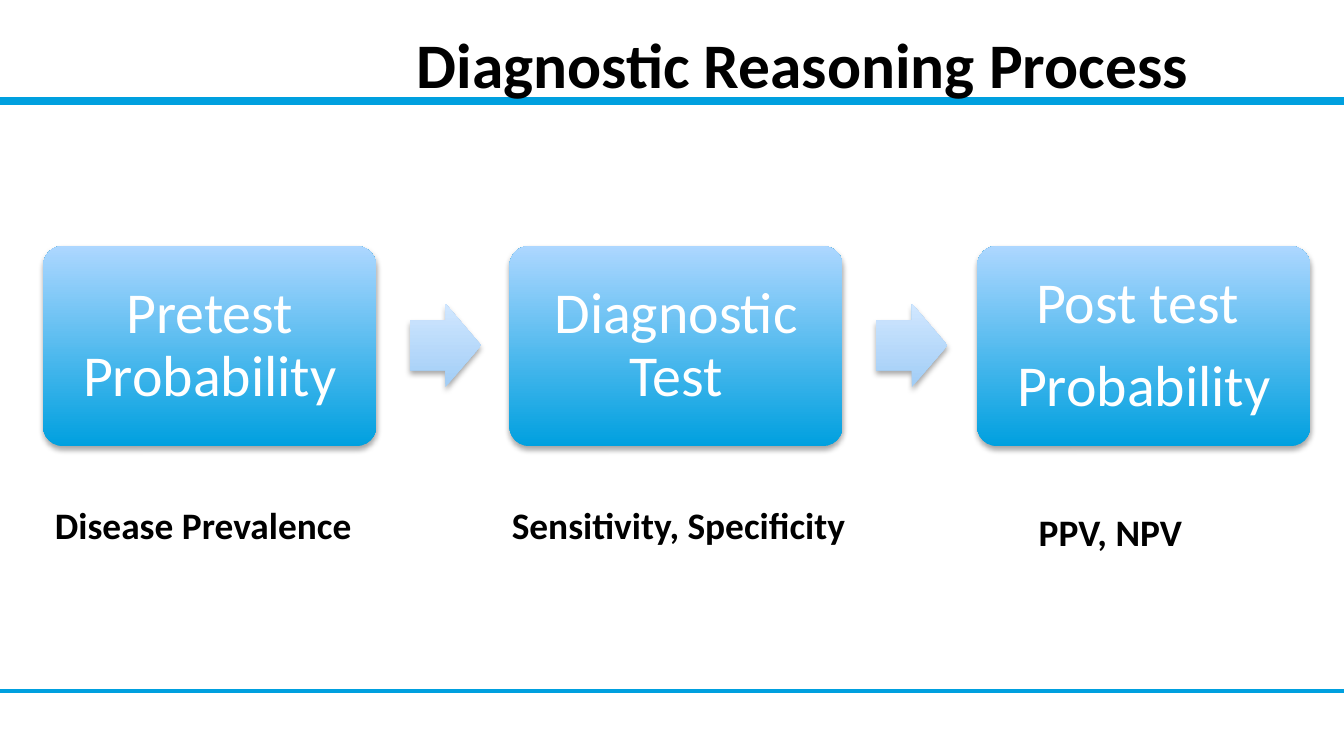
from dataclasses import dataclass

from lxml import etree
from pptx import Presentation
from pptx.dml.color import RGBColor
from pptx.enum.shapes import MSO_CONNECTOR, MSO_SHAPE
from pptx.enum.text import MSO_ANCHOR, MSO_AUTO_SIZE, PP_ALIGN
from pptx.oxml.ns import qn
from pptx.util import Inches, Pt

STRAIGHT = MSO_CONNECTOR.STRAIGHT
ROUNDED = MSO_SHAPE.ROUNDED_RECTANGLE
RIGHT_ARROW = MSO_SHAPE.RIGHT_ARROW
MIDDLE = MSO_ANCHOR.MIDDLE
LEFT, CENTER = PP_ALIGN.LEFT, PP_ALIGN.CENTER
FIXED, GROW = MSO_AUTO_SIZE.NONE, MSO_AUTO_SIZE.SHAPE_TO_FIT_TEXT

TITLE_ONLY = 5
SLIDE_WIDTH = 10
SLIDE_HEIGHT = SLIDE_WIDTH * 9 / 16
STEP_LEFTS = (0.32, 3.79, 7.27)
ARROW_LEFTS = (3.05, 6.52)


@dataclass(frozen=True)
class Theme:
    font: str = "Calibri"
    accent: str = "00A0DF"
    ink: str = "000000"
    light: str = "FFFFFF"
    step_gradient: tuple = ("00A0DF", "ADD7FF")
    arrow_gradient: tuple = ("A1CDF6", "D1E7FF")
    title_size: float = 34
    step_size: float = 31
    label_size: float = 20


def write_text(frame, text, *, font, size, color, bold=False, align=LEFT,
               line_spacing=None, space_after=None):
    """Fill a text frame, one paragraph for each line of text."""
    for index, line in enumerate(text.split("\n")):
        para = frame.add_paragraph() if index else frame.paragraphs[0]
        para.alignment = align
        if line_spacing is not None:
            para.line_spacing = line_spacing
        if space_after is not None:
            para.space_after = Pt(space_after)
        span = para.add_run()
        span.text = line
        span.font.name = font
        span.font.size = Pt(size)
        span.font.bold = bold
        span.font.color.rgb = RGBColor.from_string(color)


def add_soft_shadow(shape):
    shape.shadow.inherit = False
    effects = shape._element.spPr.find(qn("a:effectLst"))
    shadow = etree.SubElement(
        effects, qn("a:outerShdw"), blurRad=str(Pt(3.1)), dist=str(Pt(1.8)),
        dir="5400000", rotWithShape="0")
    color = etree.SubElement(shadow, qn("a:srgbClr"), val="000000")
    etree.SubElement(color, qn("a:alpha"), val="35000")


class PageBuilder:
    def __init__(self, page, theme):
        self.page = page
        self.theme = theme

    def rule(self, top, weight):
        """Draw a line across the full width of the slide."""
        line = self.page.shapes.add_connector(
            STRAIGHT, 0, Inches(top), Inches(SLIDE_WIDTH), Inches(top))
        line.line.color.rgb = RGBColor.from_string(self.theme.accent)
        line.line.width = Pt(weight)
        etree.SubElement(line._element.spPr, qn("a:effectLst"))

    def title(self, text, left, top, width, height):
        box = self.page.shapes.title
        box.left, box.top = Inches(left), Inches(top)
        box.width, box.height = Inches(width), Inches(height)
        frame = box.text_frame
        frame.word_wrap = True
        frame.auto_size = FIXED
        frame.vertical_anchor = MIDDLE
        write_text(frame, text, font=self.theme.font, color=self.theme.ink,
                   size=self.theme.title_size, bold=True)

    def gradient_shape(self, kind, left, top, width, height, colors, adjustments):
        """Add a shape shaded upwards through the two colours."""
        shape = self.page.shapes.add_shape(
            kind, Inches(left), Inches(top), Inches(width), Inches(height))
        for index, value in enumerate(adjustments):
            shape.adjustments[index] = value
        shape.fill.gradient()
        shape.fill.gradient_angle = 90
        for stop, color, position in zip(shape.fill.gradient_stops, colors, (0, 1)):
            stop.color.rgb = RGBColor.from_string(color)
            stop.position = position
        shape.line.fill.background()
        add_soft_shadow(shape)
        return shape

    def step(self, text, left):
        shape = self.gradient_shape(ROUNDED, left, 1.83, 2.48, 1.49,
                                    self.theme.step_gradient, [0.1])
        frame = shape.text_frame
        frame.word_wrap = True
        frame.vertical_anchor = MIDDLE
        frame.margin_left = frame.margin_right = Inches(0.17)
        frame.margin_top = frame.margin_bottom = Inches(0.17)
        write_text(frame, text, font=self.theme.font, color=self.theme.light,
                   size=self.theme.step_size, align=CENTER,
                   line_spacing=0.9, space_after=11)

    def arrow(self, left):
        self.gradient_shape(RIGHT_ARROW, left, 2.26, 0.53, 0.62,
                            self.theme.arrow_gradient, [0.6, 0.5])

    def label(self, text, left, top, width):
        box = self.page.shapes.add_textbox(
            Inches(left), Inches(top), Inches(width), Inches(0.44))
        frame = box.text_frame
        frame.word_wrap = True
        frame.auto_size = GROW
        write_text(frame, text, font=self.theme.font, color=self.theme.ink,
                   size=self.theme.label_size, bold=True)


def main():
    deck = Presentation()
    deck.slide_width = Inches(SLIDE_WIDTH)
    deck.slide_height = Inches(SLIDE_HEIGHT)
    page = deck.slides.add_slide(deck.slide_layouts[TITLE_ONLY])
    builder = PageBuilder(page, Theme())

    builder.rule(5.14, 2)
    builder.rule(0.75, 4.5)

    steps = ("Pretest Probability", "Diagnostic Test", "Post test \nProbability")
    for text, left in zip(steps, STEP_LEFTS):
        builder.step(text, left)
    for left in ARROW_LEFTS:
        builder.arrow(left)

    builder.label("Disease Prevalence", 0.31, 3.69, 2.46)
    builder.label("Sensitivity, Specificity", 3.71, 3.69, 2.84)
    builder.label("PPV, NPV", 7.63, 3.74, 2.37)

    builder.title("Diagnostic Reasoning Process", 3, 0, 6.29, 0.94)
    # The heading overlaps the upper rule, so it goes in front of it.
    page.shapes._spTree.append(page.shapes.title._element)

    deck.save("out.pptx")


if __name__ == "__main__":
    main()
